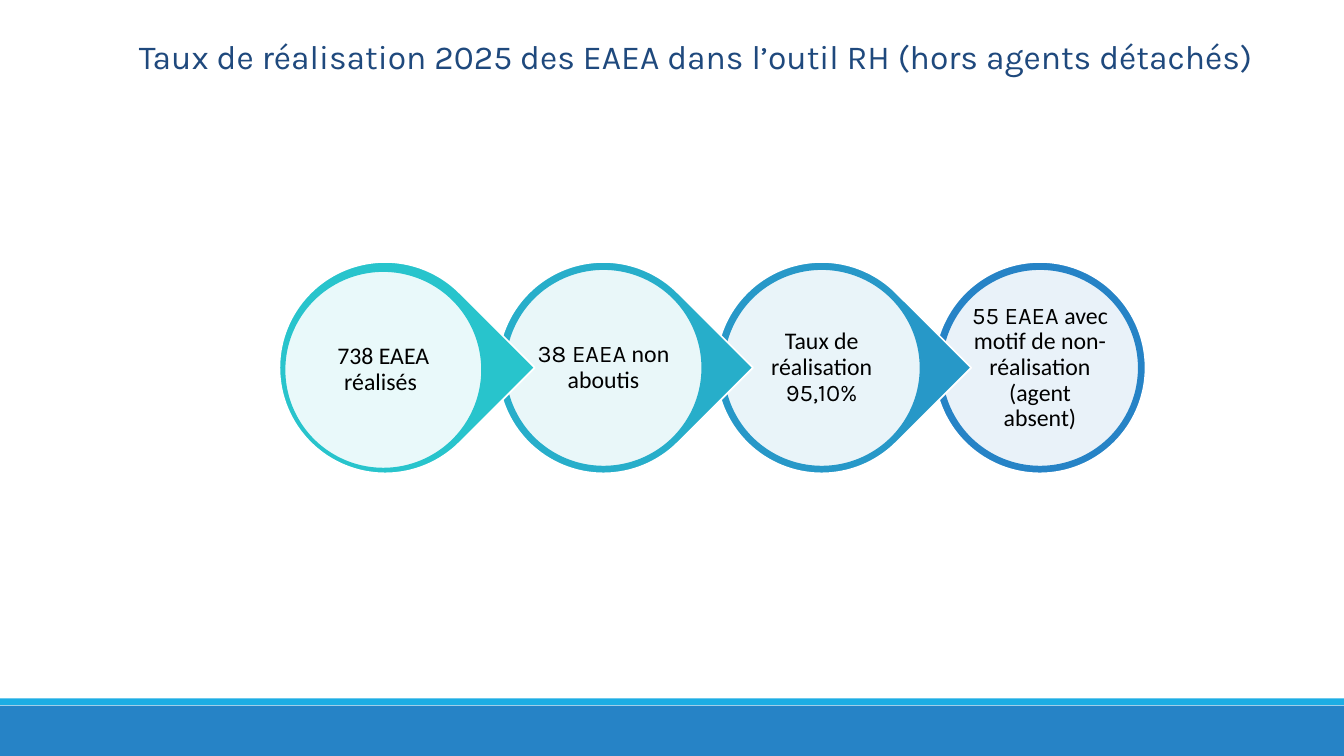
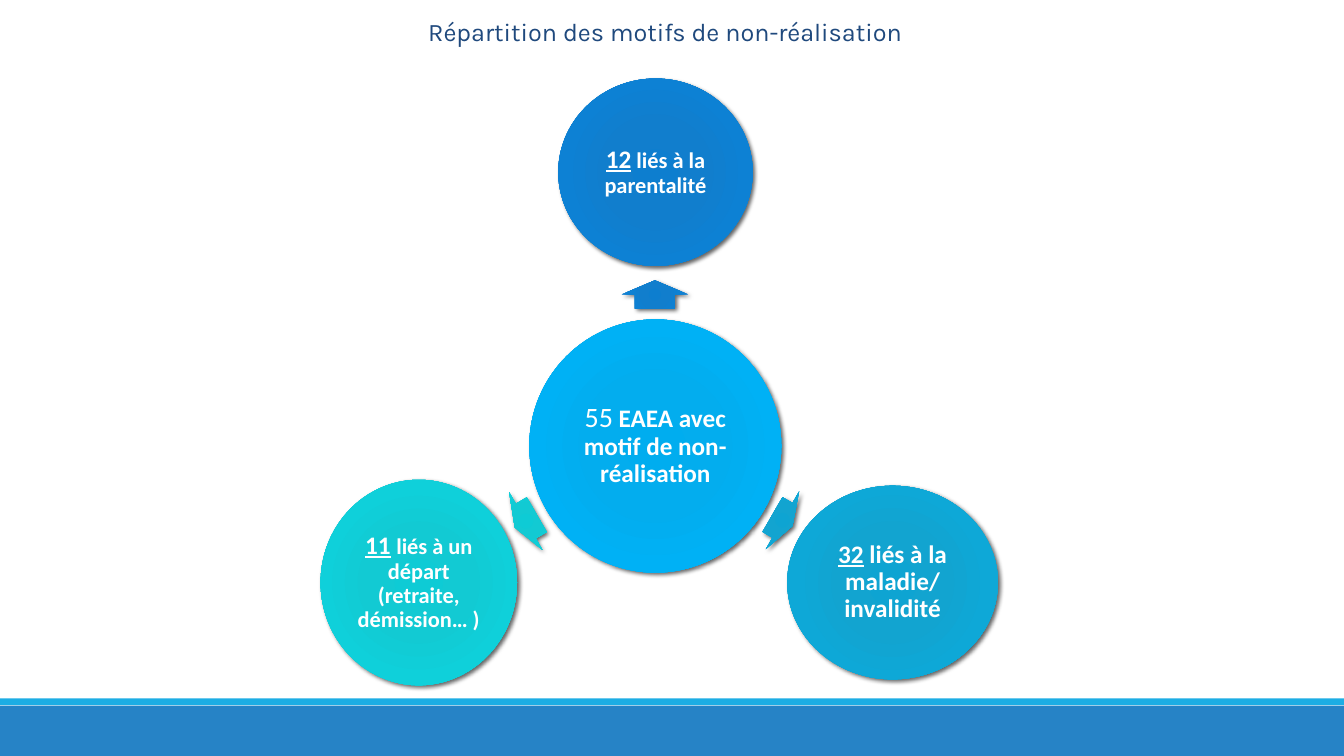
import pptx
import pptx.util
import pptx.dml.color
import pptx.enum.shapes
import pptx.enum.text
import pptx.oxml
import pptx.oxml.ns

Cm = pptx.util.Cm
Kind = pptx.enum.shapes.MSO_SHAPE
Align = pptx.enum.text.PP_ALIGN
Anchor = pptx.enum.text.MSO_ANCHOR

WIDTH, HEIGHT = 33.87, 19.05
NAVY, WHITE, BLACK = "1F497D", "FFFFFF", "000000"
BODY, HEAD = "Calibri", "Karla"
BANDS = [(17.78, 1.27, "2683C6"), (17.6, 0.17, "1CADE4")]  # top, height, colour

# Runs are (text, size, font, style), with b for bold and u for underline.
RATE = {
    "title": ("Taux de réalisation 2025 des EAEA dans l’outil RH (hors agents détachés)", 24),
    "box": (3.25, 0.79, 28.75, 1.27),
}
STEPS = [  # colour, inner circle offset, runs
    ("28C4CC", (0.13, 0.23), [("738 EAEA réalisés ", 17, BODY, "")]),
    ("27AECA", (0.18, 0.18), [("38 EAEA", 17, HEAD, ""), (" non aboutis", 17, BODY, "")]),
    ("2798C8", (0.18, 0.18), [("Taux de réalisation ", 17, BODY, ""), ("95,10%", 17, HEAD, "")]),
    ("2683C6", (0.18, 0.18), [("55 EAEA", 17, HEAD, ""),
                              (" avec motif de non-réalisation (agent absent)", 17, BODY, "")]),
]
FIRST, TOP, PITCH, OUTER, INNER = 7.04, 6.6, 5.5, 5.33, 4.98

CAUSES = {
    "title": ("Répartition des motifs de non-réalisation", 18),
    "box": (10.54, 0.28, 17.75, 1.02),
}
STOPS = (0, 34, 70, 100)
HUB = {
    "box": (13.34, 8.05, 6.35, 6.38),
    "tones": ("00ADEF", "03ADEE", "00B1F5", "12B1EE"),
    "runs": [("55", 20, BODY, ""), (" EAEA avec motif de non-réalisation", 18, BODY, "b")],
}
SPOKES = [
    {"box": (14.07, 1.98, 4.9, 4.72), "arrow": (16.15, 6.58, 0.71, 1.68), "turn": 270,
     "tones": ("0D7ECF", "117ECD", "0D81D4", "1E84CE"),
     "runs": [("12", 18, BODY, "bu"), (" liés à la parentalité", 16, BODY, "b")]},
    {"box": (19.84, 12.24, 5.31, 4.88), "arrow": (19.43, 12.27, 0.58, 1.68), "turn": 30,
     "tones": ("0EA4D2", "12A4D0", "0EA8D7", "1FA7D1"),
     "runs": [("32", 18, BODY, "bu"), (" liés à la maladie/ invalidité", 18, BODY, "b")]},
    {"box": (8.08, 12.09, 4.95, 5.18), "arrow": (12.93, 12.29, 0.64, 1.68), "turn": 150,
     "tones": ("0ECBD5", "12CAD3", "0FD0DA", "20CBD4"),
     "runs": [("11", 18, BODY, "bu"), (" ", 18, BODY, "b"),
              ("liés à un départ (retraite, démission… )", 16, BODY, "b")]},
]


def rgb(code):
    return pptx.dml.color.RGBColor.from_string(code)


def node(text):
    """Parse XML whose root opens with an a: tag."""
    space = " " + pptx.oxml.ns.nsdecls("a")
    spot = min(text.index(mark) for mark in " >" if mark in text)
    return pptx.oxml.parse_xml(text[:spot] + space + text[spot:])


def draw(slide, kind, box, fill=None, line=None, turn=0):
    shape = slide.shapes.add_shape(kind, *map(Cm, box))
    shape.shadow.inherit = False
    shape.rotation = turn
    if fill:
        shape.fill.solid()
        shape.fill.fore_color.rgb = rgb(fill)
    if line:
        shape.line.color.rgb = rgb(line)
        shape.line.width = pptx.util.Pt(1.25)
    else:
        shape.line.fill.background()
    return shape


def glow(shape, tones):
    """Give a round gradient and a soft drop shadow."""
    stops = "".join(f'<a:gs pos="{pos * 1000}"><a:srgbClr val="{tone}"/></a:gs>'
                    for pos, tone in zip(STOPS, tones))
    rim = " ".join(f'{side}="100000"' for side in "ltrb")
    props = shape.element.spPr
    props.find(pptx.oxml.ns.qn("a:prstGeom")).addnext(node(
        f'<a:gradFill rotWithShape="1"><a:gsLst>{stops}</a:gsLst>'
        f'<a:path path="circle"><a:fillToRect {rim}/></a:path></a:gradFill>'))
    props.find(pptx.oxml.ns.qn("a:effectLst")).append(node(
        '<a:outerShdw blurRad="38100" dist="25400" dir="2700000" rotWithShape="0">'
        f'<a:srgbClr val="{BLACK}"><a:alpha val="60000"/></a:srgbClr></a:outerShdw>'))


def write(par, runs, color):
    for text, size, font, style in runs:
        run = par.add_run()
        run.text = text
        run.font.size = pptx.util.Pt(size)
        run.font.name = font
        run.font.bold = "b" in style
        run.font.underline = "u" in style
        run.font.color.rgb = rgb(color)


def label(shape, runs, color, inset):
    frame = shape.text_frame
    frame.word_wrap = True
    frame.vertical_anchor = Anchor.MIDDLE
    frame.margin_left = frame.margin_right = Cm(inset)
    frame.margin_top = frame.margin_bottom = Cm(inset)
    par = frame.paragraphs[0]
    par.alignment = Align.CENTER
    par.line_spacing = 0.9
    write(par, runs, color)


def start(deck, page):
    """Add a slide with the shared bands and title."""
    slide = deck.slides.add_slide(deck.slide_layouts[6])
    for top, height, color in BANDS:
        draw(slide, Kind.RECTANGLE, (0, top, WIDTH, height), color)
    frame = slide.shapes.add_textbox(*map(Cm, page["box"])).text_frame
    frame.word_wrap = True
    text, size = page["title"]
    write(frame.paragraphs[0], [(text, size, HEAD, "")], NAVY)
    return slide


def chain(slide):
    """Draw from right to left so each tip covers the next circle."""
    last = len(STEPS) - 1
    for index, (color, (right, down), runs) in reversed(list(enumerate(STEPS))):
        left = FIRST + index * PITCH
        kind, turn = (Kind.OVAL, 0) if index == last else (Kind.TEAR, 45)
        draw(slide, kind, (left, TOP, OUTER, OUTER), color, WHITE, turn)
        disc = draw(slide, Kind.OVAL, (left + right, TOP + down, INNER, INNER), WHITE, color)
        tint = disc.element.spPr.find(".//" + pptx.oxml.ns.qn("a:srgbClr"))
        tint.append(node('<a:alpha val="90000"/>'))
        label(disc, runs, BLACK, 0.05)


def wheel(slide):
    for part in [HUB] + SPOKES:
        if "arrow" in part:
            arrow = draw(slide, Kind.RIGHT_ARROW, part["arrow"], turn=part["turn"])
            arrow.adjustments[0] = 0.6
            arrow.adjustments[1] = 0.5
            glow(arrow, part["tones"])
        disc = draw(slide, Kind.OVAL, part["box"])
        glow(disc, part["tones"])
        label(disc, part["runs"], WHITE, 0.08)


def main():
    deck = pptx.Presentation()
    deck.slide_width, deck.slide_height = Cm(WIDTH), Cm(HEIGHT)
    chain(start(deck, RATE))
    wheel(start(deck, CAUSES))
    deck.save("out.pptx")


if __name__ == "__main__":
    main()
